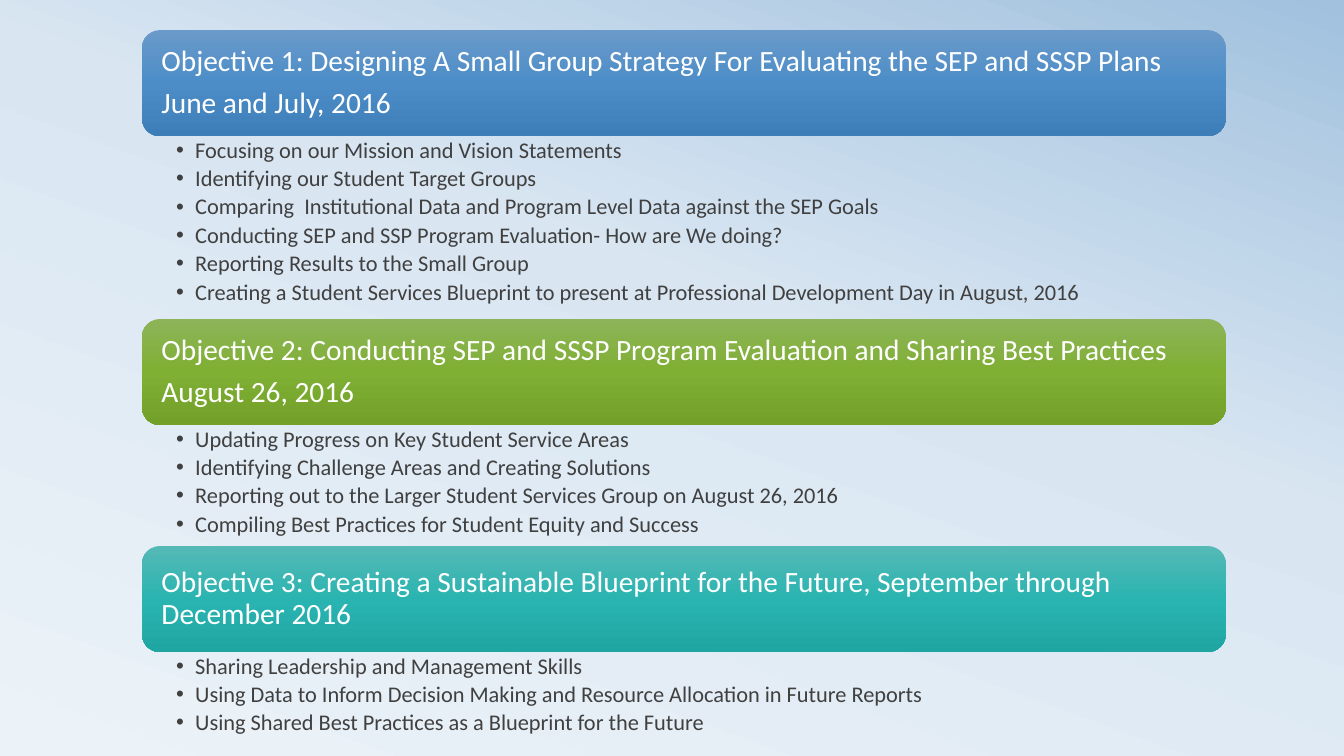
from lxml.etree import SubElement
from pptx import Presentation
from pptx.dml.color import RGBColor
from pptx.enum.shapes import MSO_SHAPE
from pptx.enum.text import MSO_ANCHOR, MSO_AUTO_SIZE, PP_ALIGN
from pptx.oxml.ns import qn
from pptx.util import Cm, Pt

SECTION_LEFT = 3.58
SECTION_WIDTH = 27.31
FIRST_TOP = 0.76
BAND_HEIGHT = 2.67
BULLET_INDENT = 0.48

OBJECTIVES = [
    {
        "heading": [
            "Objective 1: Designing A Small Group Strategy For Evaluating the SEP and SSSP Plans",
            "June and July, 2016",
        ],
        "colors": ["6A9AC9", "4C8DC8", "3E7EB8"],
        "list_height": 4.61,
        "activities": [
            "Focusing on our Mission and Vision Statements",
            "Identifying our Student Target Groups",
            "Comparing  Institutional Data and Program Level Data against the SEP Goals",
            "Conducting SEP and SSP Program Evaluation- How are We doing?",
            "Reporting Results to the Small Group",
            "Creating a Student Services Blueprint to present at Professional Development Day in August, 2016",
        ],
    },
    {
        "heading": [
            "Objective 2: Conducting SEP and SSSP Program Evaluation and Sharing Best Practices",
            "August 26, 2016",
        ],
        "colors": ["8DB459", "7FAF33", "72A029"],
        "list_height": 3.05,
        "activities": [
            "Updating Progress on Key Student Service Areas",
            "Identifying Challenge Areas and Creating Solutions",
            "Reporting out to the Larger Student Services Group on August 26, 2016",
            "Compiling Best Practices for Student Equity and Success",
        ],
    },
    {
        "heading": [
            "Objective 3: Creating a Sustainable Blueprint for the Future, September through December 2016",
        ],
        "colors": ["55B9B6", "2AB4B1", "1FA6A3"],
        "list_height": 2.28,
        "activities": [
            "Sharing Leadership and Management Skills",
            "Using Data to Inform Decision Making and Resource Allocation in Future Reports",
            "Using Shared Best Practices as a Blueprint for the Future",
        ],
    },
]


def color(value):
    return RGBColor.from_string(value)


def set_gradient(fill, element, stops, angle):
    fill.gradient()
    fill.gradient_angle = angle
    stop_list = next(element.iter(qn("a:gsLst")))
    for stop in list(stop_list):
        stop_list.remove(stop)
    for position, value in stops:
        stop = SubElement(stop_list, qn("a:gs"), pos=str(position * 1000))
        SubElement(stop, qn("a:srgbClr"), val=str(color(value)))


def set_frame(text_frame, anchor, left, top, right, bottom):
    text_frame.word_wrap = True
    text_frame.auto_size = MSO_AUTO_SIZE.NONE
    text_frame.vertical_anchor = anchor
    text_frame.margin_left, text_frame.margin_right = Cm(left), Cm(right)
    text_frame.margin_top, text_frame.margin_bottom = Cm(top), Cm(bottom)


def add_paragraphs(text_frame, lines, size, font_color, space_after):
    for index, line in enumerate(lines):
        paragraph = text_frame.add_paragraph() if index else text_frame.paragraphs[0]
        paragraph.alignment = PP_ALIGN.LEFT
        paragraph.line_spacing = 0.9
        paragraph.space_before = Pt(0)
        paragraph.space_after = Pt(space_after)
        run = paragraph.add_run()
        run.text = line
        run.font.name = "Calibri"
        run.font.size = Pt(size)
        run.font.bold = False
        run.font.color.rgb = color(font_color)


def add_bullet(paragraph):
    paragraph.level = 1
    properties = paragraph._p.get_or_add_pPr()
    properties.set("marL", str(Cm(BULLET_INDENT)))
    properties.set("indent", str(-Cm(BULLET_INDENT)))
    SubElement(properties, qn("a:buFont"), typeface="Arial")
    SubElement(properties, qn("a:buChar"), char="•")


def add_heading_band(slide, heading, colors, left, top, width, height):
    band = slide.shapes.add_shape(
        MSO_SHAPE.ROUNDED_RECTANGLE, Cm(left), Cm(top), Cm(width), Cm(height)
    )
    band.shadow.inherit = False
    band.line.fill.background()
    set_gradient(band.fill, band.element, zip((0, 50, 100), colors), 270)
    set_frame(band.text_frame, MSO_ANCHOR.MIDDLE, 0.36, 0.36, 0.36, 0.36)
    add_paragraphs(band.text_frame, heading, 21, "FFFFFF", 7)


def fill_activity_list(placeholder, activities, left, top, width, height):
    placeholder.left, placeholder.top = Cm(left), Cm(top)
    placeholder.width, placeholder.height = Cm(width), Cm(height)
    set_frame(placeholder.text_frame, MSO_ANCHOR.TOP, 0.86, 0.07, 0.4, 0.07)
    add_paragraphs(placeholder.text_frame, activities, 16, "404040", 3)
    for paragraph in placeholder.text_frame.paragraphs:
        add_bullet(paragraph)


def add_objective(slide, placeholder, objective, left, top, width):
    add_heading_band(
        slide, objective["heading"], objective["colors"], left, top, width, BAND_HEIGHT
    )
    fill_activity_list(
        placeholder, objective["activities"],
        left, top + BAND_HEIGHT, width, objective["list_height"],
    )


def add_objectives_slide(presentation):
    slide = presentation.slides.add_slide(presentation.slide_layouts.get_by_name("Comparison"))
    set_gradient(
        slide.background.fill, slide.element,
        [(0, "ECF3F8"), (58, "D9E6F2"), (100, "A1C1DE")], 70,
    )
    title, *bodies = list(slide.placeholders)
    top = FIRST_TOP
    for placeholder, objective in zip(bodies, OBJECTIVES):
        add_objective(slide, placeholder, objective, SECTION_LEFT, top, SECTION_WIDTH)
        top += BAND_HEIGHT + objective["list_height"]
    for unused in [title, *bodies[len(OBJECTIVES):]]:
        unused.element.getparent().remove(unused.element)


def main():
    presentation = Presentation()
    presentation.slide_width = Cm(33.87)
    presentation.slide_height = Cm(19.05)
    add_objectives_slide(presentation)
    presentation.save("out.pptx")


if __name__ == "__main__":
    main()
